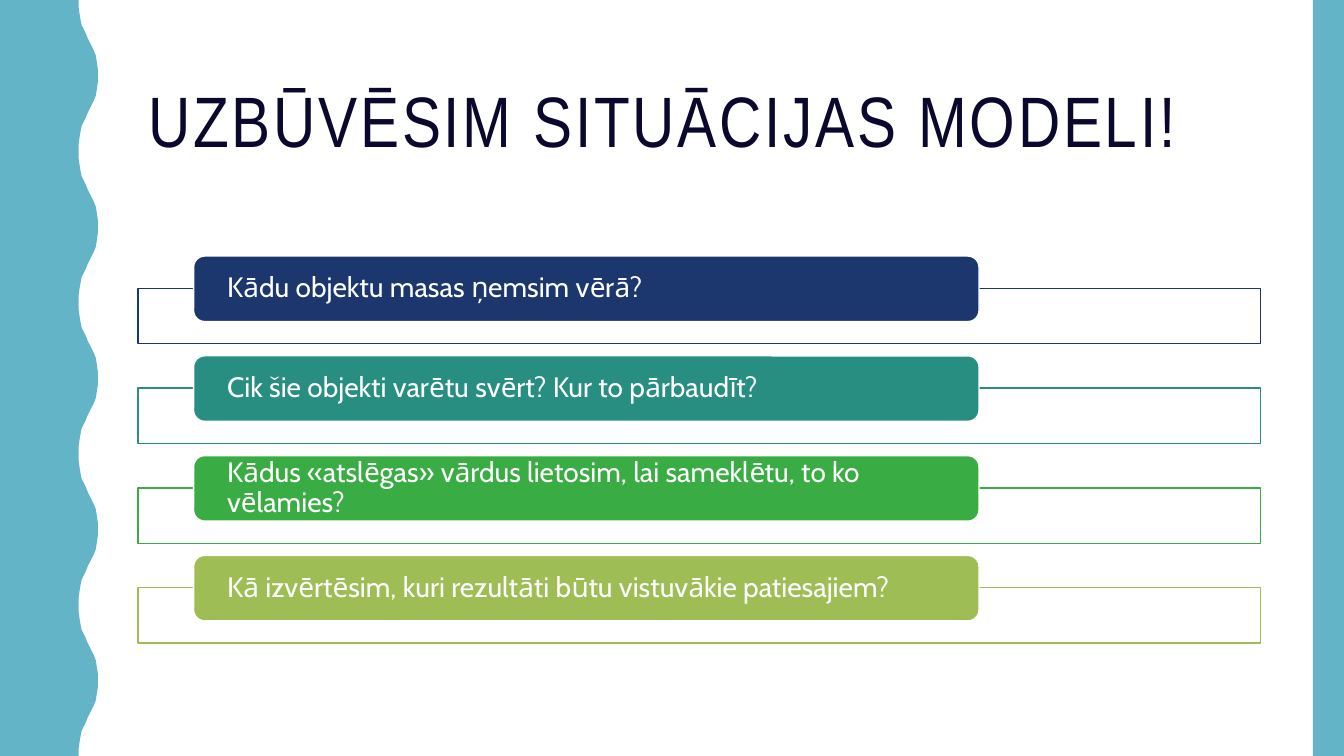
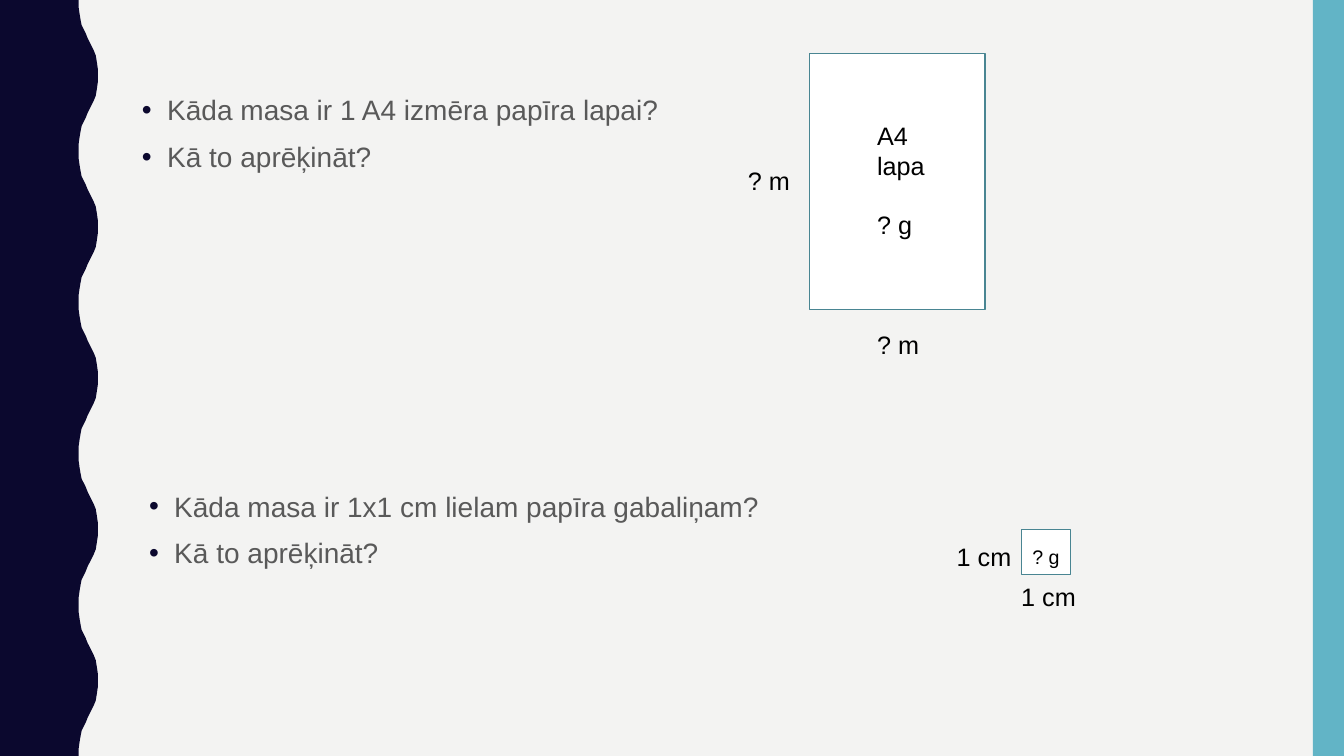
from lxml.etree import SubElement as Sub
from pptx import Presentation
from pptx.dml.color import RGBColor as RGB
from pptx.enum.shapes import MSO_SHAPE as Shape
from pptx.enum.text import MSO_ANCHOR as Anchor, MSO_AUTO_SIZE as Auto, PP_ALIGN as Align
from pptx.oxml.ns import qn
from pptx.util import Inches, Pt

WIDE, HIGH = 13.33, 7.5
WHITE = RGB(0xFF, 0xFF, 0xFF)
BLACK = RGB(0x00, 0x00, 0x00)
PALE = RGB(0xF3, 0xF3, 0xF2)
NAVY = RGB(0x0B, 0x08, 0x2E)
SKY = RGB(0x62, 0xB4, 0xC6)
GREY = RGB(0x59, 0x59, 0x59)
EDGE = RGB(0x49, 0x85, 0x92)
BLUE = RGB(0x1B, 0x37, 0x6E)
TEAL = RGB(0x29, 0x8E, 0x82)
GREEN = RGB(0x39, 0xAC, 0x44)
LIME = RGB(0x9E, 0xBE, 0x55)

CREST = [(78, 0), (78, 7), (79, 14), (80, 20), (81, 25), (83, 29), (85, 33),
         (87, 38), (89, 42), (91, 46), (93, 50), (95, 55), (96, 61), (97, 68), (97, 75)]
CYCLE = 150

STEPS = [
    ("Kādu objektu masas ņemsim vērā?", BLUE),
    ("Cik šie objekti varētu svērt? Kur to pārbaudīt?", TEAL),
    ("Kādus «atslēgas» vārdus lietosim, lai sameklētu, to ko vēlamies?", GREEN),
    ("Kā izvērtēsim, kuri rezultāti būtu vistuvākie patiesajiem?", LIME),
]


def place(shape, box):
    shape.left, shape.top, shape.width, shape.height = map(Inches, box)


def paint(shape, fill, line=None):
    shape.shadow.inherit = False
    shape.fill.solid()
    shape.fill.fore_color.rgb = fill
    if line is None:
        shape.line.fill.background()
    else:
        shape.line.color.rgb = line
        shape.line.width = Pt(1)


def dot(para):
    props = para._p.get_or_add_pPr()
    props.set("marL", str(Inches(0.25)))
    props.set("indent", str(-Inches(0.25)))
    Sub(Sub(props, qn("a:buClr")), qn("a:srgbClr")).set("val", str(NAVY))
    Sub(props, qn("a:buFont")).set("typeface", "Arial")
    Sub(props, qn("a:buChar")).set("char", "•")


def write(shape, *lines, size=18, font="Arial", color=BLACK, anchor=Anchor.TOP,
          space=None, before=None, track=None, dots=False, pad=(0.1, 0.05)):
    frame = shape.text_frame
    frame.word_wrap = True
    frame.auto_size = Auto.NONE
    frame.vertical_anchor = anchor
    frame.margin_left = frame.margin_right = Inches(pad[0])
    frame.margin_top = frame.margin_bottom = Inches(pad[1])
    for spot, line in enumerate(lines):
        para = frame.add_paragraph() if spot else frame.paragraphs[0]
        para.alignment = Align.LEFT
        para.line_spacing = space
        if before is not None and (spot or dots):
            para.space_before = Pt(before)
        if dots:
            dot(para)
        run = para.add_run()
        run.text = line
        run.font.name, run.font.size = font, Pt(size)
        run.font.color.rgb = color
        if track:
            run._r.get_or_add_rPr().set("spc", str(track * 100))


def block(slide, box, fill, line=None, kind=Shape.RECTANGLE):
    shape = slide.shapes.add_shape(kind, *map(Inches, box))
    paint(shape, fill, line)
    return shape


def label(slide, box, *lines, **form):
    write(slide.shapes.add_textbox(*map(Inches, box)), *lines, **form)


def list_box(slide, box, *lines):
    label(slide, box, *lines, size=20, color=GREY, space=1.1, before=7, dots=True)


def frame_slide(slide, back, wave):
    slide.background.fill.solid()
    slide.background.fill.fore_color.rgb = back
    crests = CREST + [(x, CYCLE - y) for x, y in CREST[-2::-1]]
    count = round(HIGH * 100 / CYCLE)
    edge = [(x, y + CYCLE * turn) for turn in range(count) for x, y in crests]
    form = slide.shapes.build_freeform(0, 0, scale=Inches(0.01))
    form.add_line_segments(edge + [(0, round(HIGH * 100))], close=True)
    paint(form.convert_to_shape(), wave)
    block(slide, (13.02, 0, WIDE - 13.02, HIGH), SKY)


def step(slide, top, text, color):
    block(slide, (1.37, top + 0.32, 11.13, 0.55), WHITE, color)
    bar = block(slide, (1.92, top, 7.79, 0.65), color, WHITE, Shape.ROUNDED_RECTANGLE)
    bar.adjustments[0] = 0.17
    write(bar, text, size=20, font="Cabin", color=WHITE, anchor=Anchor.MIDDLE,
          space=0.9, pad=(0.3, 0))


def model_slide(deck):
    slide = deck.slides.add_slide(deck.slide_layouts[5])
    frame_slide(slide, WHITE, SKY)
    title = slide.shapes.title
    place(title, (1.37, 0.42, 11.13, 1.63))
    write(title, "UZBŪVĒSIM SITUĀCIJAS MODELI!", size=51, font="Arial Narrow",
          color=NAVY, anchor=Anchor.MIDDLE, space=0.9, track=2)
    for spot, (text, color) in enumerate(STEPS):
        step(slide, 2.54 + 0.99 * spot, text, color)


def paper_slide(deck):
    slide = deck.slides.add_slide(deck.slide_layouts[6])
    frame_slide(slide, PALE, NAVY)
    list_box(slide, (1.31, 0.84, 6, 1.2),
             "Kāda masa ir 1 A4 izmēra papīra lapai?", "Kā to aprēķināt?")
    block(slide, (8.03, 0.53, 1.74, 2.54), WHITE, EDGE)
    label(slide, (8.6, 3.22, 0.99, 0.4), "? m")
    label(slide, (8.6, 1.14, 0.99, 1.31), "A4 lapa", "? g", before=21)
    label(slide, (7.32, 1.59, 0.99, 0.4), "? m")
    list_box(slide, (1.38, 4.77, 7.5, 1.2),
             "Kāda masa ir 1x1 cm lielam papīra gabaliņam?", "Kā to aprēķināt?")
    block(slide, (10.13, 5.25, 0.49, 0.45), WHITE, EDGE)
    label(slide, (10.03, 5.72, 0.99, 0.4), "1 cm")
    label(slide, (10.14, 5.36, 0.99, 0.35), "? g", size=14)
    label(slide, (9.39, 5.32, 0.99, 0.4), "1 cm")


def main():
    deck = Presentation()
    deck.slide_width, deck.slide_height = Inches(WIDE), Inches(HIGH)
    model_slide(deck)
    paper_slide(deck)
    deck.save("out.pptx")


if __name__ == "__main__":
    main()
